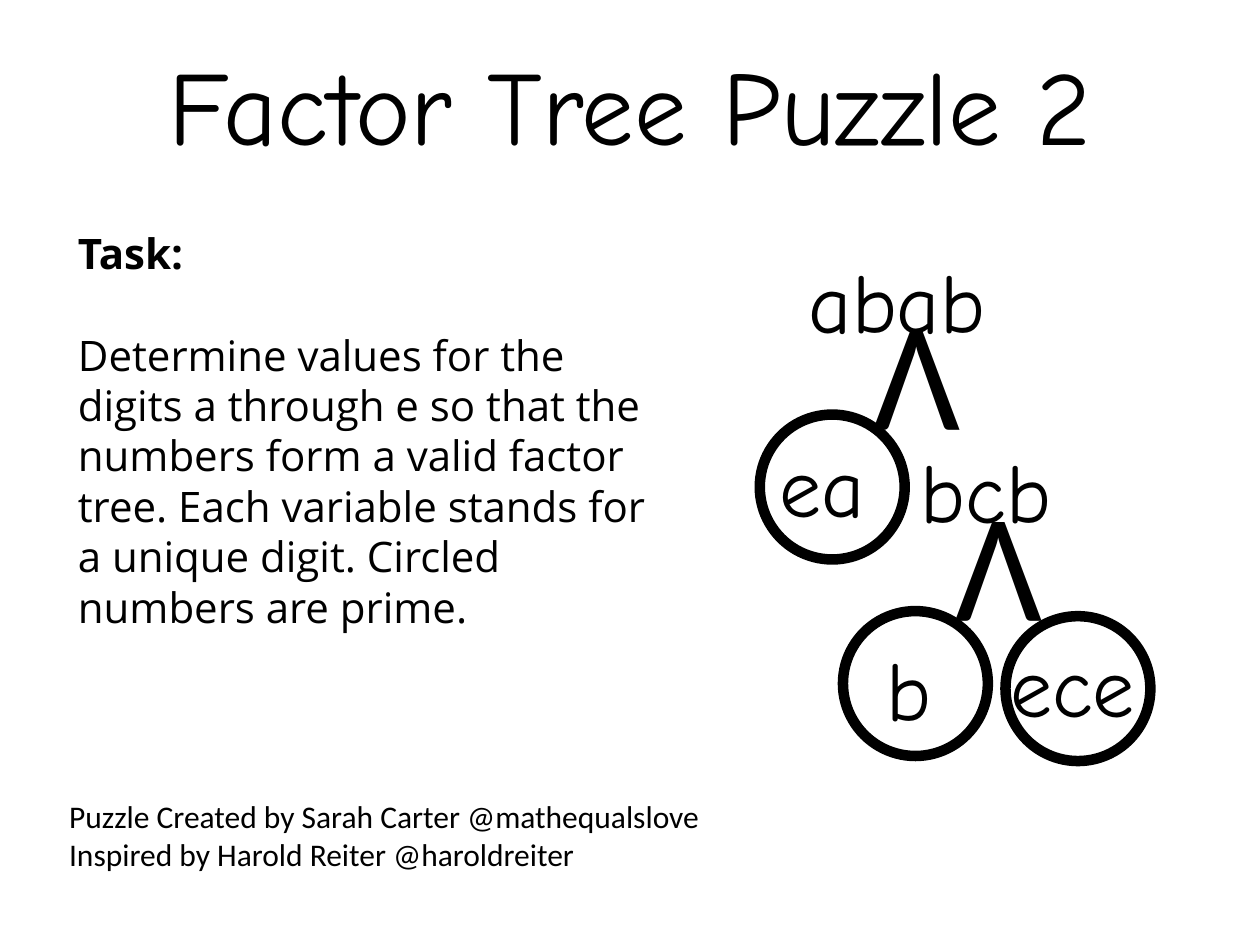
from pptx import Presentation
from pptx.dml.color import RGBColor
from pptx.enum import shapes, text
from pptx.util import Inches, Pt

THEME = {
    "ink": RGBColor(0, 0, 0),
    "paper": RGBColor(255, 255, 255),
    "title": ("Comic Neue", 60),
    "number": ("Comic Neue", 48),
    "branch": ("Calibri", 88),
    "task": ("Open Sans", 24),
    "credit": ("Calibri", 18),
    "ring": 6,
}
CIRCLE_SIZE = 1.15

TITLE = ("Factor Tree Puzzle 2", (0, 0.27, 10, 1.41))
TASK = (
    ["Task:",
     "Determine values for the digits a through e so that the numbers form "
     "a valid factor tree. Each variable stands for a unique digit. "
     "Circled numbers are prime."],
    (0.52, 1.76, 4.89, 3.33),
)
CREDIT = (
    ["Puzzle Created by Sarah Carter @mathequalslove",
     "Inspired by Harold Reiter @haroldreiter"],
    (0.45, 6.28, 5.69, 0.71),
)
# Back to front: (kind, label, box); a prime also has the corner of its circle.
TREE = [
    ("branch", "V", (6.7, 2.32, 1.02, 1.58), None),
    ("number", "abab", (6.32, 1.93, 2.04, 0.91), None),
    ("number", "ea", (6.09, 3.39, 1.03, 0.91), (6.03, 3.29)),
    ("number", "bcb", (7.21, 3.44, 1.66, 0.91), None),
    ("number", "b", (6.94, 5.01, 0.66, 0.91), (6.69, 4.85)),
    ("number", "ece", (7.92, 4.98, 1.3, 0.91), (7.98, 4.89)),
    ("branch", "V", (7.41, 4.27, 0.96, 1.15), None),
]


def inches(values):
    return [Inches(value) for value in values]


def write(shape, lines, style):
    frame = shape.text_frame
    frame.text = "\n".join(lines)
    frame.word_wrap = True
    frame.auto_size = text.MSO_AUTO_SIZE.SHAPE_TO_FIT_TEXT
    frame.vertical_anchor = text.MSO_ANCHOR.TOP
    name, size = THEME[style]
    for paragraph in frame.paragraphs:
        for run in paragraph.runs:
            run.font.name = name
            run.font.size = Pt(size)
            run.font.color.rgb = THEME["ink"]
    return frame


def add_text(slide, lines, box, style):
    shape = slide.shapes.add_textbox(*inches(box))
    write(shape, lines, style)
    return shape


def add_circle(slide, corner):
    circle = slide.shapes.add_shape(
        shapes.MSO_SHAPE.OVAL, *inches((*corner, CIRCLE_SIZE, CIRCLE_SIZE)))
    circle.shadow.inherit = False
    circle.fill.solid()
    circle.fill.fore_color.rgb = THEME["paper"]
    circle.line.color.rgb = THEME["ink"]
    circle.line.width = Pt(THEME["ring"])


def add_title(slide):
    label, box = TITLE
    title = slide.shapes.title
    title.left, title.top, title.width, title.height = inches(box)
    frame = write(title, [label], "title")
    frame.paragraphs[0].alignment = text.PP_ALIGN.CENTER


def add_task(slide):
    heading, body = add_text(slide, *TASK, "task").text_frame.paragraphs
    heading.runs[0].font.bold = True
    body.space_before = Pt(29)


def add_tree(slide):
    for kind, label, box, circle_corner in TREE:
        if circle_corner:
            add_circle(slide, circle_corner)
        shape = add_text(slide, [label], box, kind)
        if kind == "branch":
            shape.rotation = 180


def main():
    presentation = Presentation()
    presentation.slide_width, presentation.slide_height = inches((10, 7.5))
    slide = presentation.slides.add_slide(
        presentation.slide_layouts.get_by_name("Title Only"))
    add_tree(slide)
    add_title(slide)
    add_task(slide)
    add_text(slide, *CREDIT, "credit")
    presentation.save("out.pptx")


if __name__ == "__main__":
    main()
